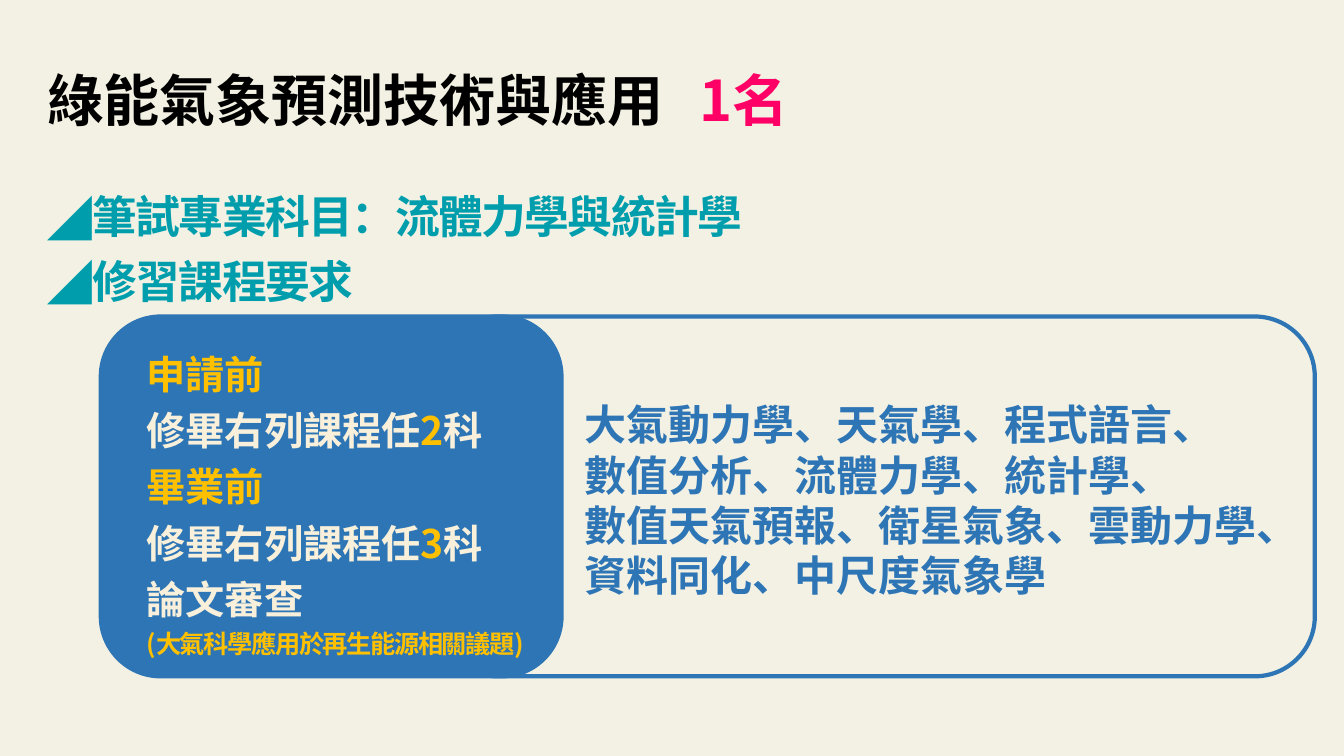
from lxml.etree import SubElement
from pptx import Presentation
from pptx.dml.color import RGBColor
from pptx.enum.shapes import MSO_SHAPE as Shape
from pptx.enum.text import MSO_ANCHOR as Anchor, MSO_AUTO_SIZE as AutoSize, PP_ALIGN as Align
from pptx.oxml.ns import qn
from pptx.util import Inches, Pt

WIDTH, HEIGHT = Inches(13.33), Inches(7.5)
FONT = "Noto Sans CJK SC"
COLORS = {
    "paper": "F3F1E3", "ink": "000000", "pink": "FF0066", "teal": "009EAD",
    "blue": "2E75B6", "gold": "FFC000", "cream": "F8F0DA",
}
PANEL_TOP, PANEL_HEIGHT = 0.4187, 0.476


def color(name):
    return RGBColor.from_string(COLORS[name])


def apply(target, values):
    for name, value in values.items():
        setattr(target, name, value)


def place(box, left, top, width, height):
    apply(box, {
        "left": int(WIDTH * left), "top": int(HEIGHT * top),
        "width": int(WIDTH * width), "height": int(HEIGHT * height),
    })


def add_span(para, text, tint, size, tracking=0):
    span = para.add_run()
    span.text = text
    apply(span.font, {"name": FONT, "size": Pt(size), "bold": True})
    span.font.color.rgb = color(tint)
    props = span.font._element
    SubElement(props, qn("a:ea")).set("typeface", FONT)
    if tracking:
        props.set("spc", str(int(tracking * 100)))


def fill_paragraphs(frame, rows, size, pitch, tracking=0):
    for index, spans in enumerate(rows):
        para = frame.add_paragraph() if index or frame.text else frame.paragraphs[0]
        apply(para, {
            "alignment": Align.LEFT, "line_spacing": Pt(pitch),
            "space_before": Pt(0), "space_after": Pt(0),
        })
        for text, tint in spans:
            for number, line in enumerate(text.split("\n")):
                if number:
                    para.add_line_break()
                add_span(para, line, tint, size, tracking)


def set_tab(para, position):
    tabs = SubElement(para._p.get_or_add_pPr(), qn("a:tabLst"))
    tab = SubElement(tabs, qn("a:tab"))
    tab.set("pos", str(Inches(position)))
    tab.set("algn", "l")


def set_bullet(para, symbol, indent):
    props = para._p.get_or_add_pPr()
    props.set("marL", str(Inches(indent)))
    props.set("indent", str(-Inches(indent)))
    SubElement(props, qn("a:buFont")).set("typeface", FONT)
    SubElement(props, qn("a:buChar")).set("char", symbol)


def add_panel(page, left, width, filled, inset):
    panel = page.shapes.add_shape(Shape.ROUNDED_RECTANGLE, 0, 0, 0, 0)
    place(panel, left, PANEL_TOP, width, PANEL_HEIGHT)
    panel.shadow.inherit = False
    if filled:
        panel.fill.solid()
        panel.fill.fore_color.rgb = color("blue")
    else:
        panel.fill.background()
    panel.line.color.rgb = color("blue")
    panel.line.width = Pt(3)
    apply(panel.text_frame, {
        "word_wrap": True, "vertical_anchor": Anchor.MIDDLE,
        "margin_left": Inches(inset), "margin_right": Inches(0.06),
        "margin_top": Inches(0.14), "margin_bottom": Inches(0.08),
    })
    return panel.text_frame


def add_title(page):
    title = page.shapes.title
    place(title, 0.028, 0.0773, 0.958, 0.108)
    apply(title.text_frame, {"vertical_anchor": Anchor.MIDDLE, "auto_size": AutoSize.NONE})
    spans = [("綠能氣象預測技術與應用\t", "ink"), ("1名", "pink")]
    fill_paragraphs(title.text_frame, [spans], 40, 48)
    set_tab(title.text_frame.paragraphs[0], 6.46)


def add_points(page):
    body = page.placeholders[1]
    place(body, 0.028, 0.2293, 0.944, 0.1773)
    apply(body.text_frame, {"vertical_anchor": Anchor.TOP, "auto_size": AutoSize.NONE})
    points = ["筆試專業科目：流體力學與統計學", "修習課程要求"]
    fill_paragraphs(body.text_frame, [[(point, "teal")] for point in points], 32, 46, -1.2)
    for para in body.text_frame.paragraphs:
        set_bullet(para, "◢", 0.38)


def add_courses(page):
    frame = add_panel(page, 0.3256, 0.6527, False, 1.28)
    courses = ("大氣動力學、天氣學、程式語言、\n數值分析、流體力學、統計學、\n"
               "數值天氣預報、衛星氣象、雲動力學、資料同化、中尺度氣象學")
    fill_paragraphs(frame, [[(courses, "blue")]], 30, 36)


def add_requirements(page):
    frame = add_panel(page, 0.075, 0.3428, True, 0.28)
    rows = []
    for stage, count in [("申請前", "2"), ("畢業前", "3")]:
        rows.append([(stage, "gold")])
        rows.append([("修畢右列課程任", "cream"), (count, "gold"), ("科", "cream")])
    rows.append([("論文審查", "cream")])
    fill_paragraphs(frame, rows, 28, 40.25)
    fill_paragraphs(frame, [[("(大氣科學應用於再生能源相關議題)", "gold")]], 18, 25.5, -1)


def main():
    deck = Presentation()
    apply(deck, {"slide_width": WIDTH, "slide_height": HEIGHT})
    page = deck.slides.add_slide(deck.slide_layouts[1])
    page.background.fill.solid()
    page.background.fill.fore_color.rgb = color("paper")
    add_title(page)
    add_points(page)
    add_courses(page)
    add_requirements(page)
    deck.save("out.pptx")


if __name__ == "__main__":
    main()
